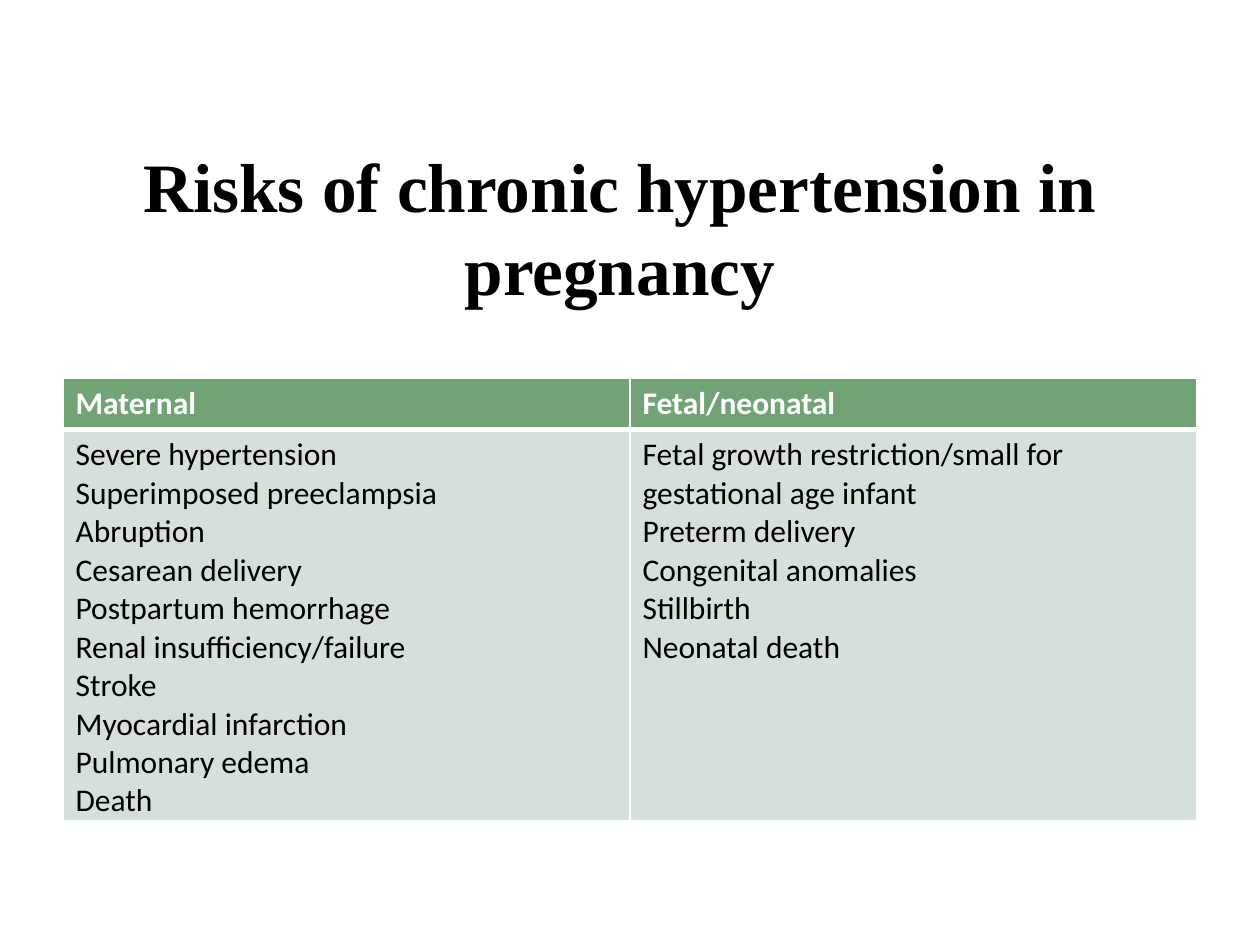
from dataclasses import dataclass

from pptx import Presentation
from pptx.dml.color import RGBColor
from pptx.enum.text import MSO_ANCHOR, PP_ALIGN
from pptx.oxml import parse_xml
from pptx.oxml.ns import nsdecls
from pptx.util import Inches, Pt


@dataclass(frozen=True)
class Theme:
    title_font: str = "Times New Roman"
    body_font: str = "Calibri"
    title_size: float = 39.6
    body_size: float = 18
    ink: str = "000000"
    white: str = "FFFFFF"
    header_fill: str = "72A376"
    body_fill: str = "D5E0D6"
    thin_rule: float = 1
    thick_rule: float = 3


RISKS = {
    "Maternal": [
        "Severe hypertension",
        "Superimposed preeclampsia",
        "Abruption",
        "Cesarean delivery",
        "Postpartum hemorrhage",
        "Renal insufficiency/failure",
        "Stroke",
        "Myocardial infarction",
        "Pulmonary edema",
        "Death",
    ],
    "Fetal/neonatal": [
        "Fetal growth restriction/small for gestational age infant",
        "Preterm delivery",
        "Congenital anomalies",
        "Stillbirth",
        "Neonatal death",
    ],
}


class SlideBuilder:
    def __init__(self, slide, theme):
        self.slide = slide
        self.theme = theme

    def format_text(self, frame, font, size, color, bold):
        for para in frame.paragraphs:
            for span in para.runs:
                span.font.name = font
                span.font.size = Pt(size)
                span.font.bold = bold
                span.font.color.rgb = RGBColor.from_string(color)

    def title(self, text, left, top, width, height):
        box = self.slide.shapes.add_textbox(
            Inches(left), Inches(top), Inches(width), Inches(height))
        frame = box.text_frame
        frame.word_wrap = True
        frame.vertical_anchor = MSO_ANCHOR.MIDDLE
        frame.text = text
        frame.paragraphs[0].alignment = PP_ALIGN.CENTER
        self.format_text(frame, self.theme.title_font,
                         self.theme.title_size, self.theme.ink, True)

    def cell_borders(self, cell, is_header):
        """Rule all four sides, with a thick rule between header and body."""
        thick_side = "B" if is_header else "T"
        properties = cell._tc.get_or_add_tcPr()
        for side in "LRTB":
            points = (self.theme.thick_rule if side == thick_side
                      else self.theme.thin_rule)
            properties.append(parse_xml(
                f'<a:ln{side} {nsdecls("a")} w="{Pt(points)}"><a:solidFill>'
                f'<a:srgbClr val="{self.theme.white}"/></a:solidFill></a:ln{side}>'))

    def cell(self, cell, text, is_header):
        theme = self.theme
        cell.text_frame.text = text
        self.format_text(cell.text_frame, theme.body_font, theme.body_size,
                         theme.white if is_header else theme.ink, is_header)
        self.cell_borders(cell, is_header)
        cell.fill.solid()
        cell.fill.fore_color.rgb = RGBColor.from_string(
            theme.header_fill if is_header else theme.body_fill)

    def table(self, columns, left, top, width, row_heights):
        """Draw a header row over one body row that lists each column's items."""
        table = self.slide.shapes.add_table(
            len(row_heights), len(columns), Inches(left), Inches(top),
            Inches(width), Inches(sum(row_heights))).table
        for row, height in zip(table.rows, row_heights):
            row.height = Inches(height)
        for index, (heading, items) in enumerate(columns.items()):
            self.cell(table.cell(0, index), heading, True)
            self.cell(table.cell(1, index), "\n".join(items), False)


def main():
    deck = Presentation()
    deck.slide_width, deck.slide_height = Inches(10), Inches(7.5)
    slide = deck.slides.add_slide(deck.slide_layouts[6])
    builder = SlideBuilder(slide, Theme())
    builder.title("Risks of chronic hypertension in pregnancy", 0.42, 1.17, 9, 1.25)
    builder.table(RISKS, 0.5, 3, 9, [0.41, 3.1])
    deck.save("out.pptx")


if __name__ == "__main__":
    main()
